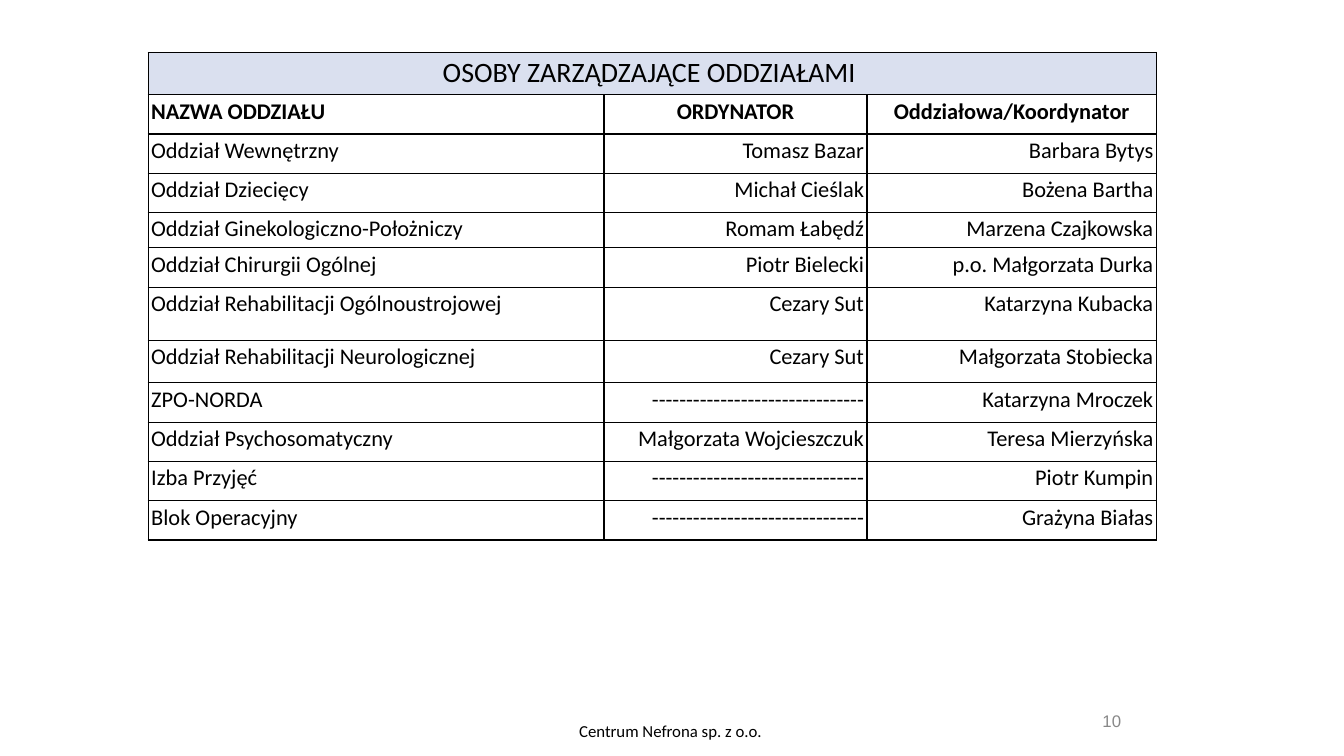
from pptx import Presentation
from pptx import util as u
from pptx.dml.color import RGBColor
from pptx.enum import text
from pptx.oxml import parse_xml
from pptx.oxml.ns import nsdecls

LEFT, CENTER, RIGHT = text.PP_ALIGN.LEFT, text.PP_ALIGN.CENTER, text.PP_ALIGN.RIGHT
DASHES = "-" * 31
TITLE = "OSOBY ZARZĄDZAJĄCE ODDZIAŁAMI "
HEADERS = ("NAZWA ODDZIAŁU", "ORDYNATOR", "Oddziałowa/Koordynator")
WARDS = [
    ("Oddział Wewnętrzny", "Tomasz Bazar", "Barbara Bytys"),
    ("Oddział Dziecięcy", "Michał Cieślak", "Bożena Bartha"),
    ("Oddział Ginekologiczno-Położniczy", "Romam Łabędź", "Marzena Czajkowska"),
    ("Oddział Chirurgii Ogólnej", "Piotr Bielecki", "p.o. Małgorzata Durka"),
    ("Oddział Rehabilitacji Ogólnoustrojowej", "Cezary Sut", "Katarzyna Kubacka"),
    ("Oddział Rehabilitacji Neurologicznej", "Cezary Sut", "Małgorzata Stobiecka"),
    ("ZPO-NORDA", DASHES, "Katarzyna Mroczek"),
    ("Oddział Psychosomatyczny", "Małgorzata Wojcieszczuk", "Teresa Mierzyńska"),
    ("Izba Przyjęć", DASHES, "Piotr Kumpin"),
    ("Blok Operacyjny", DASHES, "Grażyna Białas"),
]
COL_WIDTHS = (4.52, 2.61, 2.87)
ROW_HEIGHT = 0.39
SPECIAL_HEIGHTS = {0: 0.42, 4: 0.35, 6: 0.53, 7: 0.42}


def color(value):
    return RGBColor.from_string(value)


def set_margins(obj, size):
    obj.margin_left = obj.margin_right = u.Inches(size)
    obj.margin_top = obj.margin_bottom = u.Inches(size)


def write(tf, content, size, align, bold=False, font="Calibri", hue="000000"):
    p = tf.paragraphs[0]
    p.alignment = align
    r = p.add_run()
    r.text = content
    r.font.size = u.Pt(size)
    r.font.name = font
    r.font.bold = bold
    r.font.color.rgb = color(hue)


def add_borders(cell):
    tcPr = cell._tc.get_or_add_tcPr()
    for i, side in enumerate(("lnL", "lnR", "lnT", "lnB")):
        tcPr.insert(i, parse_xml(
            f'<a:{side} {nsdecls("a")} w="12700"><a:solidFill>'
            f'<a:srgbClr val="000000"/></a:solidFill></a:{side}>'))


def style_cell(cell, fill=None):
    set_margins(cell, 0.03)
    if fill:
        cell.fill.solid()
        cell.fill.fore_color.rgb = color(fill)
    else:
        cell.fill.background()
    add_borders(cell)


def add_ward_table(s):
    rows = [(TITLE, "", ""), HEADERS] + WARDS
    heights = [SPECIAL_HEIGHTS.get(i, ROW_HEIGHT) for i in range(len(rows))]
    table = s.shapes.add_table(
        len(rows), len(COL_WIDTHS), u.Inches(1.47), u.Inches(0.52),
        u.Inches(sum(COL_WIDTHS)), u.Inches(sum(heights))).table
    table.first_row = table.horz_banding = False
    for col, width in zip(table.columns, COL_WIDTHS):
        col.width = u.Inches(width)
    for row, height in zip(table.rows, heights):
        row.height = u.Inches(height)
    table.cell(0, 0).merge(table.cell(0, 2))
    for i, values in enumerate(rows):
        for j, value in enumerate(values):
            cell = table.cell(i, j)
            style_cell(cell, "DAE0EF" if i == 0 else None)
            if i == 0:
                align = CENTER
            elif j == 0:
                align = LEFT
            else:
                align = CENTER if i == 1 else RIGHT
            if value:
                write(cell.text_frame, value, 20 if i == 0 else 16, align, i == 1)


def add_label(s, box, content, align, margin=0.05, **style):
    sp = s.shapes.add_textbox(*map(u.Inches, box))
    tf = sp.text_frame
    tf.word_wrap = True
    tf.vertical_anchor = text.MSO_ANCHOR.MIDDLE
    set_margins(tf, margin)
    write(tf, content, 12, align, **style)


def main():
    prs = Presentation()
    prs.slide_width, prs.slide_height = u.Inches(13.33), u.Inches(7.5)
    s = prs.slides.add_slide(prs.slide_layouts[6])
    add_label(s, (10.67, 7, 0.5, 0.3), "10", RIGHT, font="Arial", hue="888888")
    add_ward_table(s)
    add_label(s, (4.42, 7.05, 4.5, 0.4), "Centrum Nefrona sp. z o.o. ", CENTER)
    prs.save("out.pptx")


if __name__ == "__main__":
    main()
